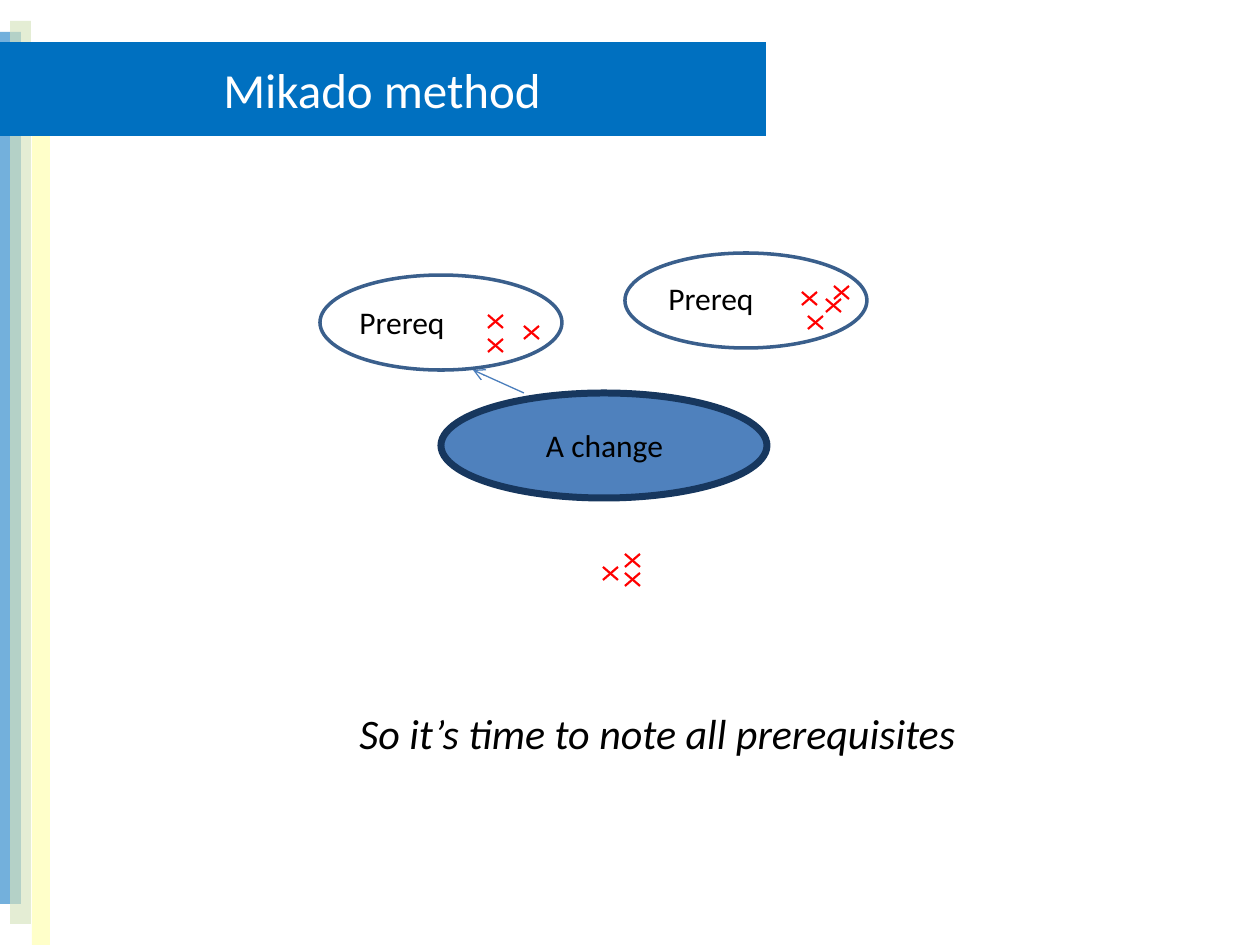
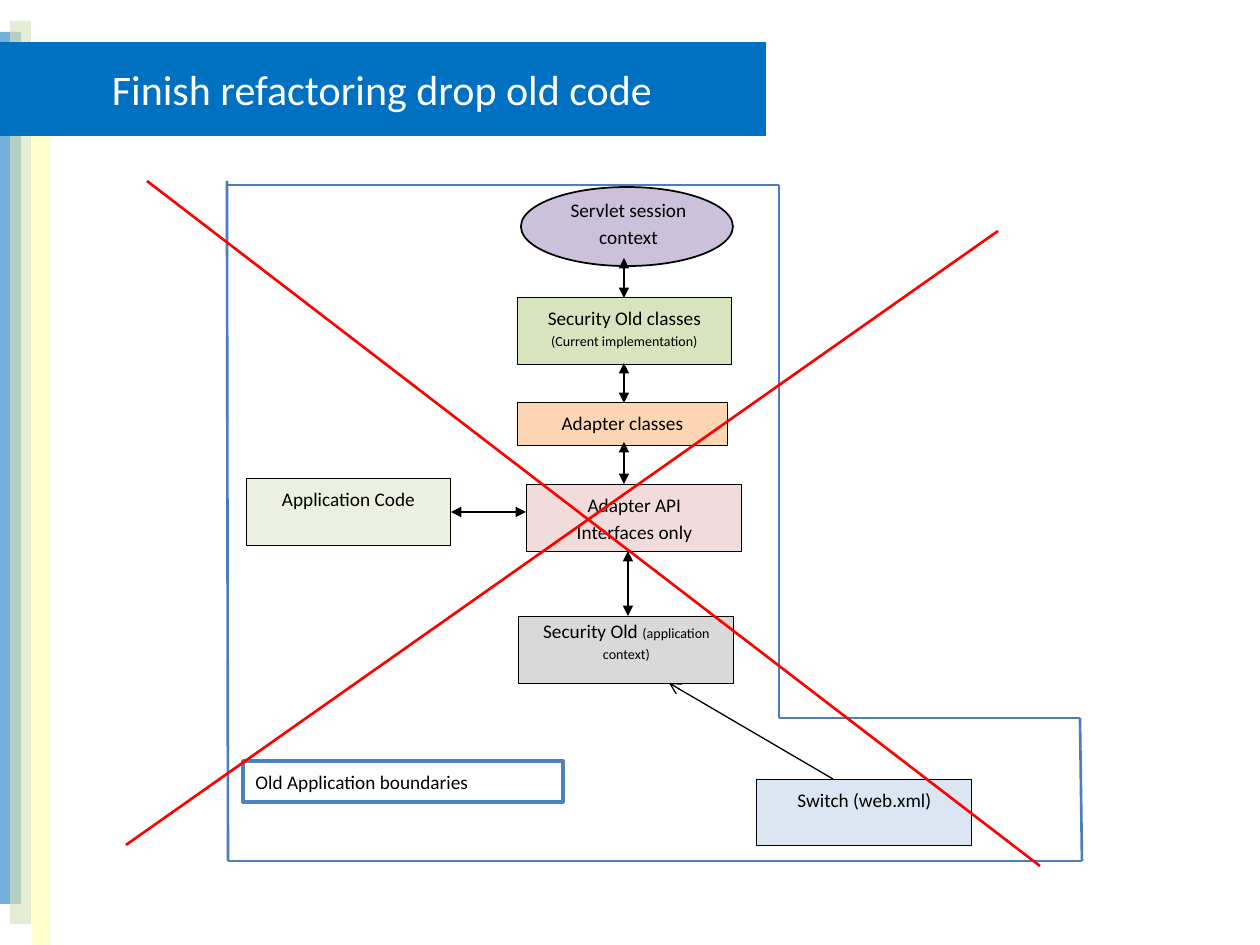
from itertools import pairwise

from lxml.etree import SubElement
from pptx import Presentation
from pptx.dml.color import RGBColor
from pptx.enum.shapes import MSO_CONNECTOR, MSO_SHAPE
from pptx.enum.text import MSO_ANCHOR, PP_ALIGN
from pptx.oxml.ns import qn
from pptx.util import Emu, Pt

PX = 7257
FONT = "Calibri"
WHITE = RGBColor(0xFF, 0xFF, 0xFF)
BLACK = RGBColor(0x00, 0x00, 0x00)
RED = RGBColor(0xFF, 0x00, 0x00)
TITLE_BLUE = RGBColor(0x00, 0x70, 0xC0)
YELLOW = RGBColor(0xFF, 0xFF, 0x00)
GREEN = RGBColor(0xD7, 0xE4, 0xBD)
PALE_GREEN = RGBColor(0xEB, 0xF1, 0xDE)
BLUE = RGBColor(0x4F, 0x81, 0xBD)
LINE_BLUE = RGBColor(0x4B, 0x7E, 0xBC)
OVAL_BLUE = RGBColor(0x3A, 0x5F, 0x8C)
NAVY = RGBColor(0x17, 0x37, 0x5E)
PALE_BLUE = RGBColor(0xDC, 0xE6, 0xF2)
GRAY = RGBColor(0xD9, 0xD9, 0xD9)
PINK = RGBColor(0xF2, 0xDC, 0xDB)
ORANGE = RGBColor(0xFC, 0xD5, 0xB5)
PURPLE = RGBColor(0xCC, 0xC1, 0xDA)

SIDE_BANDS = [
    ((0, 32, 21, 872), TITLE_BLUE, 55),
    ((10, 21, 21, 903), GREEN, 65),
    ((32, 42, 18, 903), YELLOW, 21),
]
TITLE_BAND = (-2, 42, 768, 94)

MIKADO_OVALS = [
    ((625, 253, 242, 95), WHITE, OVAL_BLUE, 2),
    ((320, 275, 242, 95), WHITE, OVAL_BLUE, 2),
    ((441, 393, 326, 105), BLUE, NAVY, 4),
]
MIKADO_LABELS = [
    ("Prereq", (656, 273, 179, 50), PP_ALIGN.LEFT),
    ("Prereq", (347, 297, 189, 50), PP_ALIGN.LEFT),
    ("A change", (489, 420, 231, 50), PP_ALIGN.CENTER),
]
CROSS_SIZE = (15, 13)
CROSSES = [
    (488, 315), (524, 326), (488, 339),
    (802, 292), (834, 286), (826, 299), (808, 316),
    (603, 567), (625, 573), (625, 554),
]
PREREQ_ARROW = ((524, 393), (473, 370))
MIKADO_NOTE = ("So it’s time to note all prerequisites", (347, 701, 746, 63))

SERVLET_OVAL = (521, 187, 212, 79)
SERVLET_LABEL = ("Servlet session context", (544, 189, 169, 69))
CODE_BOXES = [
    ((757, 779, 215, 67), PALE_BLUE, [[("Switch (web.xml)", 11)]]),
    ((527, 484, 215, 67), PINK, [[("Adapter API", 11)], [("Interfaces only", 11)]]),
    ((517, 297, 215, 67), GREEN,
     [[("Security Old classes", 11)], [("(Current implementation)", 8)]]),
    ((246, 478, 205, 67), PALE_GREEN, [[("Application Code", 11)]]),
    ((517, 402, 211, 43), ORANGE, [[("Adapter classes", 11)]]),
]
CONTEXT_BOX = ((519, 616, 215, 67), GRAY,
               [[("Security Old ", 11), ("(application context)", 8)]])
BOUNDARY_LABEL = ("Old Application boundaries", (243, 761, 320, 41))
DOUBLE_ARROWS = [
    ((628, 616), (628, 551)),
    ((624, 403), (624, 363)),
    ((451, 512), (526, 512)),
    ((624, 484), (624, 442)),
    ((624, 298), (624, 258)),
]
SWITCH_ARROW = ((833, 779), (669, 683))
BOUNDARY = [(227, 185), (779, 185), (779, 718), (1080, 718),
            (1082, 861), (228, 861), (227, 181)]
STRIKES = [((998, 231), (126, 845)), ((147, 181), (1040, 866))]


def scaled(lengths):
    return [Emu(length * PX) for length in lengths]


def add_box(page, place, fill, line=None, width=0, kind=MSO_SHAPE.RECTANGLE):
    box = page.shapes.add_shape(kind, *scaled(place))
    box.shadow.inherit = False
    box.fill.solid()
    box.fill.fore_color.rgb = fill
    if line is None:
        box.line.fill.background()
    else:
        box.line.color.rgb = line
        box.line.width = Pt(width)
    return box


def write(box, paragraphs, color=BLACK, align=PP_ALIGN.CENTER,
          anchor=MSO_ANCHOR.TOP, spacing=1, italic=False):
    frame = box.text_frame
    frame.word_wrap = True
    frame.vertical_anchor = anchor
    for index, spans in enumerate(paragraphs):
        para = frame.add_paragraph() if index else frame.paragraphs[0]
        para.alignment = align
        para.line_spacing = spacing
        para.font.name = FONT
        para.font.size = Pt(spans[0][1])
        para.font.color.rgb = color
        para.font.italic = italic
        for text, size in spans:
            span = para.add_run()
            span.text = text
            if size != spans[0][1]:
                span.font.size = Pt(size)


def add_label(page, text, place, size, **style):
    write(page.shapes.add_textbox(*scaled(place)), [[(text, size)]], **style)


def add_line(page, start, end, color, width, head=None, tail=None):
    line = page.shapes.add_connector(MSO_CONNECTOR.STRAIGHT, *scaled(start + end))
    line.line.color.rgb = color
    line.line.width = Pt(width)
    properties = line.line._get_or_add_ln()
    for tag, arrow in (("a:headEnd", head), ("a:tailEnd", tail)):
        if arrow:
            SubElement(properties, qn(tag), type=arrow)
    SubElement(line._element.spPr, qn("a:effectLst"))


def add_page(deck, title, title_size):
    page = deck.slides.add_slide(deck.slide_layouts[6])
    for place, color, opacity in SIDE_BANDS:
        band = add_box(page, place, color)
        tint = band._element.spPr.find(qn("a:solidFill"))[0]
        SubElement(tint, qn("a:alpha"), val=str(opacity * 1000))
    write(add_box(page, TITLE_BAND, TITLE_BLUE), [[(title, title_size)]],
          color=WHITE, anchor=MSO_ANCHOR.MIDDLE)
    return page


def add_cross(page, left, top):
    right, bottom = left + CROSS_SIZE[0], top + CROSS_SIZE[1]
    add_line(page, (left, top), (right, bottom), RED, 1.25)
    add_line(page, (right, top), (left, bottom), RED, 1.25)


def build_mikado(deck):
    page = add_page(deck, "Mikado method", 28)
    for place, fill, line, width in MIKADO_OVALS:
        add_box(page, place, fill, line, width, MSO_SHAPE.OVAL)
    for text, place, align in MIKADO_LABELS:
        add_label(page, text, place, 18, align=align)
    for left, top in CROSSES:
        add_cross(page, left, top)
    add_line(page, *PREREQ_ARROW, LINE_BLUE, 0.75, tail="arrow")
    add_label(page, *MIKADO_NOTE, 24, align=PP_ALIGN.LEFT, italic=True)


def build_refactoring(deck):
    page = add_page(deck, "Finish refactoring drop old code", 24)
    add_box(page, SERVLET_OVAL, PURPLE, BLACK, 1, MSO_SHAPE.OVAL)
    add_label(page, *SERVLET_LABEL, 11, spacing=1.15)
    for place, fill, paragraphs in CODE_BOXES:
        write(add_box(page, place, fill, BLACK, 0.5), paragraphs, spacing=1.15)

    place, fill, paragraphs = CONTEXT_BOX
    context = add_box(page, place, fill, BLACK, 0.5)
    frame = context.text_frame
    frame.margin_left = frame.margin_top = frame.margin_right = frame.margin_bottom = 0
    write(context, paragraphs, spacing=1.15)

    for start, end in DOUBLE_ARROWS:
        add_line(page, start, end, BLACK, 1, head="triangle", tail="triangle")
    add_line(page, *SWITCH_ARROW, BLACK, 0.75, tail="arrow")
    for start, end in pairwise(BOUNDARY):
        add_line(page, start, end, LINE_BLUE, 1.5)

    text, place = BOUNDARY_LABEL
    write(add_box(page, place, WHITE, BLUE, 2), [[(text, 11)]],
          align=PP_ALIGN.LEFT, spacing=1.15)
    for start, end in STRIKES:
        add_line(page, start, end, RED, 1.5)


def main():
    deck = Presentation()
    deck.slide_width, deck.slide_height = scaled((1260, 945))
    build_mikado(deck)
    build_refactoring(deck)
    deck.save("out.pptx")


if __name__ == "__main__":
    main()
